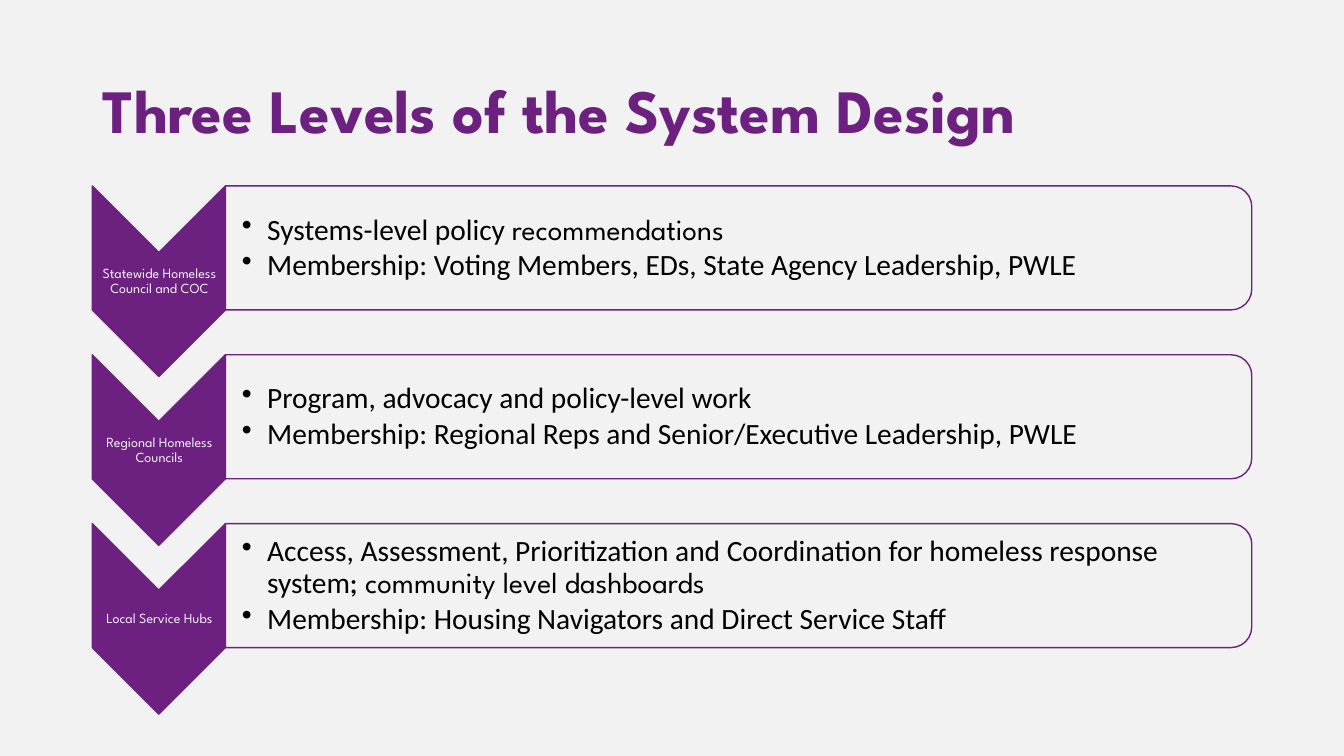
from dataclasses import dataclass

from lxml import etree
from pptx import Presentation
from pptx.dml.color import RGBColor
from pptx.enum import shapes, text
from pptx.oxml.ns import qn
from pptx.util import Inches, Pt


@dataclass(frozen=True)
class Theme:
    purple: RGBColor = RGBColor(0x6C, 0x20, 0x80)
    pale: RGBColor = RGBColor(0xF2, 0xF2, 0xF2)
    black: RGBColor = RGBColor(0, 0, 0)
    display: str = "League Spartan"
    body: str = "Calibri"
    title_size: int = 44
    label_size: int = 10
    bullet_size: int = 21


theme = Theme()

# Each level: label, then bullets made of (text, font) spans
LEVELS = [
    ("Statewide Homeless Council and COC", [
        [("Systems-level policy ", theme.body), ("recommendations", theme.display)],
        [("Membership: Voting Members, EDs, State Agency Leadership, PWLE", theme.body)],
    ]),
    ("Regional Homeless Councils", [
        [("Program, advocacy and policy-level work", theme.body)],
        [("Membership: Regional Reps and Senior/Executive Leadership, PWLE", theme.body)],
    ]),
    ("Local Service Hubs", [
        [("Access, Assessment, Prioritization and Coordination for homeless response system",
          theme.body), ("; community level dashboards", theme.display)],
        [("Membership: Housing Navigators and Direct Service Staff", theme.body)],
    ]),
]
PITCH = 3.35 / 2


def add_turned_shape(page, kind, left, top, width, height, fill):
    """Add an outlined shape turned a quarter clockwise."""
    shape = page.shapes.add_shape(
        kind, Inches(left), Inches(top), Inches(width), Inches(height))
    shape.rotation = 90
    shape.shadow.inherit = False
    shape.fill.solid()
    shape.fill.fore_color.rgb = fill
    shape.line.color.rgb = theme.purple
    shape.line.width = Pt(1)
    return shape


def add_text_frame(page, left, top, width, height, left_margin):
    box = page.shapes.add_textbox(
        Inches(left), Inches(top), Inches(width), Inches(height))
    frame = box.text_frame
    margin = Inches(0.01)
    settings = dict(word_wrap=True, vertical_anchor=text.MSO_ANCHOR.MIDDLE,
                    margin_left=Inches(left_margin), margin_top=margin,
                    margin_right=margin, margin_bottom=margin)
    for name, value in settings.items():
        setattr(frame, name, value)
    return frame


deck = Presentation()
deck.slide_width, deck.slide_height = Inches(13.33), Inches(7.5)
page = deck.slides.add_slide(deck.slide_layouts[5])
page.background.fill.solid()
page.background.fill.fore_color.rgb = theme.pale

title = page.shapes.title
title.left, title.top = Inches(0.92), Inches(0.4)
title.width, title.height = Inches(11.5), Inches(1.45)
title.text_frame.text = "Three Levels of the System Design"
title.text_frame.vertical_anchor = text.MSO_ANCHOR.MIDDLE
para = title.text_frame.paragraphs[0]
para.alignment = text.PP_ALIGN.LEFT
para.line_spacing = 0.9
for name, value in dict(name=theme.display, size=Pt(theme.title_size), bold=True).items():
    setattr(para.font, name, value)
para.font.color.rgb = theme.purple

for row, (label, bullets) in enumerate(LEVELS):
    shift = row * PITCH

    add_turned_shape(page, shapes.MSO_SHAPE.CHEVRON,
                     0.63, 2.13 + shift, 1.89, 1.32, theme.purple)
    frame = add_text_frame(page, 0.92, 2.51 + shift, 1.32, 0.57, 0.01)
    para = frame.paragraphs[0]
    para.alignment = text.PP_ALIGN.CENTER
    para.line_spacing = 0.9
    para.space_after = Pt(3.5)
    span = para.add_run()
    span.text = label
    span.font.name = theme.display
    span.font.size = Pt(theme.label_size)
    span.font.color.rgb = theme.pale

    panel = add_turned_shape(page, shapes.MSO_SHAPE.ROUND_2_SAME_RECTANGLE,
                             6.71, -2.63 + shift, 1.23, 10.18, theme.pale)
    tint = panel.fill._xPr.find(qn("a:solidFill"))[0]
    etree.SubElement(tint, qn("a:alpha"), val="90000")

    frame = add_text_frame(page, 2.24, 1.91 + shift, 10.12, 1.11, 0.16)
    for index, spans in enumerate(bullets):
        para = frame.add_paragraph() if index else frame.paragraphs[0]
        para.level = 1
        para.line_spacing = 0.9
        para.space_after = Pt(3)
        properties = para._p.get_or_add_pPr()
        properties.set("marL", str(Inches(0.25)))
        properties.set("indent", str(-Inches(0.25)))
        etree.SubElement(properties, qn("a:buChar"), char="•")
        for words, font in spans:
            span = para.add_run()
            span.text = words
            span.font.name = font
            span.font.size = Pt(theme.bullet_size)
            span.font.color.rgb = theme.black

deck.save("out.pptx")
